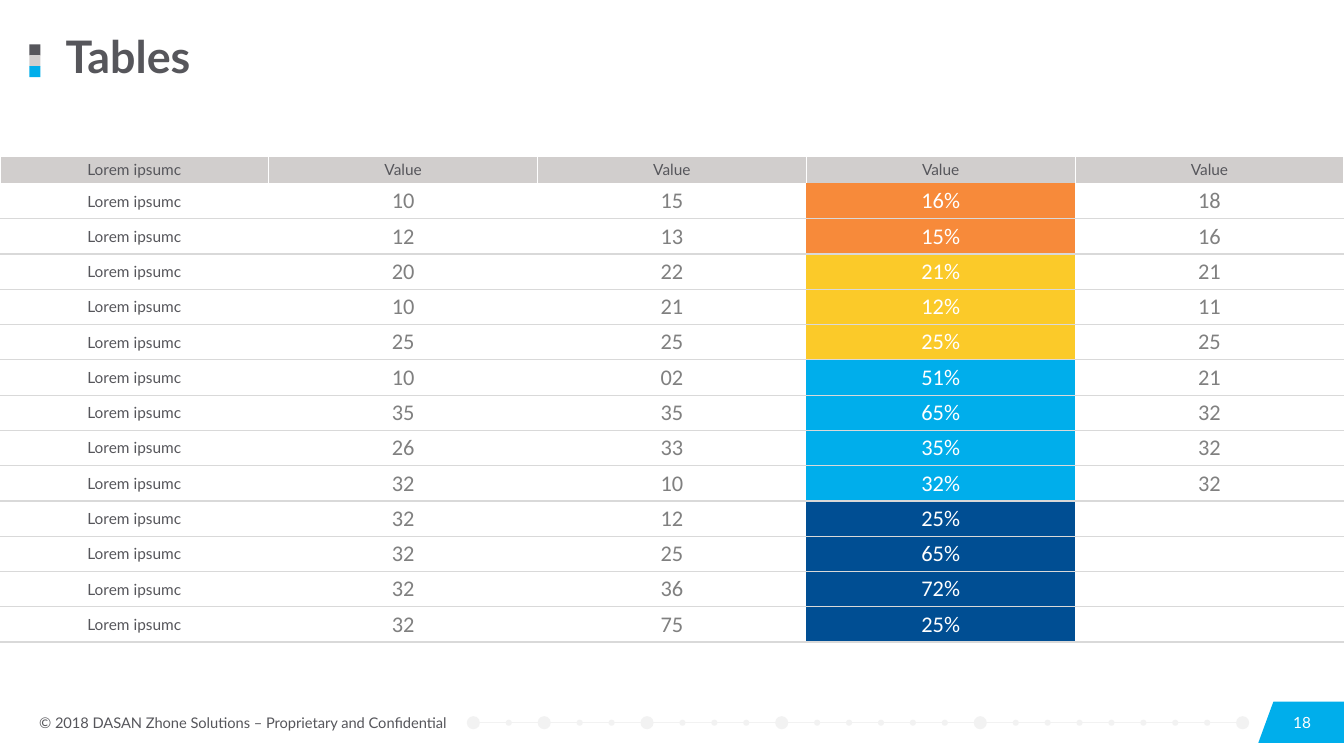
from lxml.etree import SubElement
from pptx import Presentation
from pptx.dml.color import RGBColor
from pptx.enum.shapes import MSO_CONNECTOR, MSO_SHAPE
from pptx.enum.text import MSO_ANCHOR as Anchor, PP_ALIGN as Align
from pptx.oxml.ns import qn
from pptx.util import Inches, Pt

DARK, SILVER, CYAN, WHITE = "56565B", "D1CECD", "00AEEB", "FFFFFF"
GRAY, RULE, PALE = "808080", "D9D9D9", "F2F2F2"
ORANGE, YELLOW, NAVY = "F78A3A", "FBCA29", "004E93"


def paint(part, color):
    part.fill.solid()
    part.fill.fore_color.rgb = RGBColor.from_string(color)
    if hasattr(part, "shadow"):
        part.line.fill.background()
        part.shadow.inherit = False


def write(paragraph, text, size, color, font="Lato", bold=False, align=Align.LEFT):
    paragraph.alignment = align
    run = paragraph.add_run()
    run.text = text
    run.font.name = font
    run.font.size = Pt(size)
    run.font.bold = bold
    run.font.color.rgb = RGBColor.from_string(color)


prs = Presentation()
prs.slide_width, prs.slide_height = Inches(13.33), Inches(7.5)
slide = prs.slides.add_slide(prs.slide_layouts[5])
shapes = slide.shapes

title = shapes.title
title.left, title.top, title.width, title.height = map(Inches, (0.55, 0.31, 12.78, 0.55))
title.text_frame.vertical_anchor = Anchor.MIDDLE
title.text_frame.paragraphs[0].line_spacing = 0.9
write(title.text_frame.paragraphs[0], "Tables", 32, DARK, bold=True)

for i, color in enumerate((DARK, SILVER, CYAN)):
    marker = shapes.add_shape(MSO_SHAPE.RECTANGLE, Inches(0.29), Inches(0.44 + i * 0.108),
                              Inches(0.11), Inches(0.11))
    paint(marker, color)

outline = shapes.build_freeform(Inches(12.63), Inches(6.96))
outline.add_line_segments([(Inches(x), Inches(y)) for x, y in
                           ((13.33, 6.96), (13.33, 7.37), (12.48, 7.37))])
paint(outline.convert_to_shape(), CYAN)

for text, left, width, size, color, align in (
    ("© 2018 DASAN Zhone Solutions – Proprietary and Confidential",
     0.29, 4.3, 10.5, DARK, Align.LEFT),
    ("18", 12.54, 0.75, 11, WHITE, Align.CENTER),
):
    footer = shapes.add_textbox(Inches(left), Inches(7.03), Inches(width), Inches(0.28))
    footer.text_frame.word_wrap = True
    write(footer.text_frame.paragraphs[0], text, size, color, align=align)

track = shapes.add_connector(MSO_CONNECTOR.STRAIGHT, Inches(4.66), Inches(7.17),
                             Inches(12.28), Inches(7.17))
track.line.color.rgb = RGBColor.from_string(PALE)
track.line.width = Pt(0.5)
SubElement(track._element.spPr, qn("a:effectLst"))

BIG, SMALL = 0.13, 0.06
dots = [BIG]
for count in (1, 2, 3, 5, 7):
    dots += [SMALL] * count + [BIG]
dot_left, dots_right = 4.63, 12.39
gap = (dots_right - dot_left - sum(dots)) / (len(dots) - 1)
for size in dots:
    dot = shapes.add_shape(MSO_SHAPE.OVAL, Inches(dot_left), Inches(7.17 - size / 2),
                           Inches(size), Inches(size))
    paint(dot, PALE)
    dot_left += size + gap

header = ("Lorem ipsumc", "Value", "Value", "Value", "Value")
records = (
    ("10", "15", "16%", "18", ORANGE),
    ("12", "13", "15%", "16", ORANGE),
    ("20", "22", "21%", "21", YELLOW),
    ("10", "21", "12%", "11", YELLOW),
    ("25", "25", "25%", "25", YELLOW),
    ("10", "02", "51%", "21", CYAN),
    ("35", "35", "65%", "32", CYAN),
    ("26", "33", "35%", "32", CYAN),
    ("32", "10", "32%", "32", CYAN),
    ("32", "12", "25%", "", NAVY),
    ("32", "25", "65%", "", NAVY),
    ("32", "36", "72%", "", NAVY),
    ("32", "75", "25%", "", NAVY),
)
rows = [header] + [("Lorem ipsumc", *record[:4]) for record in records]
table = shapes.add_table(len(rows), len(header), 0, Inches(1.55),
                         Inches(13.33), Inches(4.82)).table
table.first_row = table.horz_banding = False
table._tbl.tblPr.find(qn("a:tableStyleId")).text = "{2D5ABB26-0587-4C30-8999-92F81FD0307C}"

for r, values in enumerate(rows):
    table.rows[r].height = Inches(0.35 if r else 0.27)
    for c, value in enumerate(values):
        cell = table.cell(r, c)
        cell.vertical_anchor = Anchor.MIDDLE
        cell.margin_left = cell.margin_right = Inches(0.08)
        cell.margin_top = cell.margin_bottom = Inches(0.04)

        sides, border = (("a:lnB",), RULE) if r else (("a:lnL", "a:lnR", "a:lnT"), WHITE)
        for side in sides:
            edge = SubElement(cell._tc.get_or_add_tcPr(), qn(side), w=str(Pt(1)))
            SubElement(SubElement(edge, qn("a:solidFill")), qn("a:srgbClr"), val=border)

        if r == 0:
            paint(cell, SILVER)
        elif c == 3:
            paint(cell, records[r - 1][-1])
        else:
            cell.fill.background()

        paragraph = cell.text_frame.paragraphs[0]
        if not value:
            SubElement(paragraph._p, qn("a:endParaRPr"), sz="1600")
        elif r == 0 or c == 0:
            write(paragraph, value, 11, DARK, align=Align.CENTER)
        else:
            write(paragraph, value, 16, WHITE if c == 3 else GRAY, "Calibri",
                  align=Align.CENTER)

prs.save("out.pptx")
